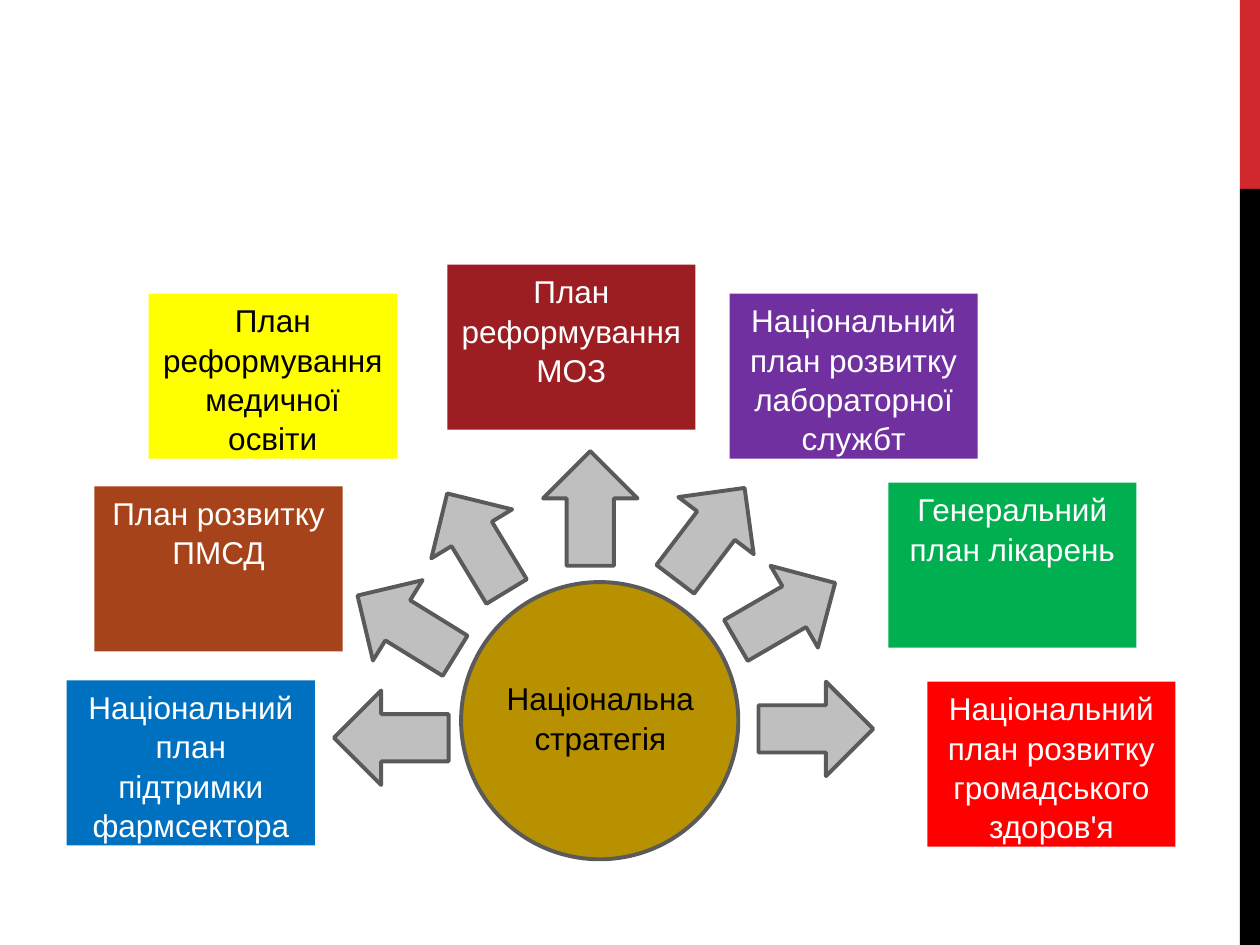
from pptx import Presentation
from pptx.dml.color import RGBColor
from pptx.enum import shapes, text
from pptx.util import Inches, Pt

SHAPE = shapes.MSO_SHAPE


def add_shape(kind, box, fill, outlined=False):
    sp = sld.shapes.add_shape(kind, *map(Inches, box))
    sp.shadow.inherit = False
    sp.fill.solid()
    sp.fill.fore_color.rgb = RGBColor.from_string(fill)
    if outlined:
        sp.line.color.rgb = RGBColor.from_string("5A5A5A")
        sp.line.width = Pt(2.25)
    else:
        sp.line.fill.background()
    return sp


def write(sp, lines, color):
    tf = sp.text_frame
    frame_format = {"word_wrap": True, "vertical_anchor": text.MSO_ANCHOR.TOP}
    for name, value in frame_format.items():
        setattr(tf, name, value)
    tf.text = lines
    for p in tf.paragraphs:
        p.alignment = text.PP_ALIGN.CENTER
        p.line_spacing = 1.04
        for name, value in {"name": "Arial", "size": Pt(18)}.items():
            setattr(p.font, name, value)
        p.font.color.rgb = RGBColor.from_string(color)


prs = Presentation()
prs.slide_width, prs.slide_height = Inches(10), Inches(7.5)
sld = prs.slides.add_slide(prs.slide_layouts[6])

# Side band
add_shape(SHAPE.RECTANGLE, (9.84, 0, 0.16, 1.5), "D1282E")
add_shape(SHAPE.RECTANGLE, (9.84, 1.5, 0.16, 6), "000000")

# Central strategy
add_shape(SHAPE.OVAL, (3.66, 4.62, 2.2, 2.2), "B89101", outlined=True)
label = sld.shapes.add_textbox(Inches(3.9), Inches(5.33), Inches(1.73), Inches(0.71))
write(label, "Національна\nстратегія", "000000")

# Arrows clockwise from the left: left, top, rotation
arrows = [
    (2.65, 5.48, 180),
    (2.77, 4.59, 211.7),
    (3.33, 3.93, 238.8),
    (4.23, 3.66, 270),
    (5.18, 3.86, 307.2),
    (5.78, 4.48, 329.9),
    (6.02, 5.41, 0),
]
for left, top, rotation in arrows:
    sp = add_shape(SHAPE.RIGHT_ARROW, (left, top, 0.91, 0.75), "BFBFBF", outlined=True)
    sp.rotation = rotation

# Plans clockwise from the left: left, top, fill, text colour, wording
plans = [
    (0.53, 5.4, "0070C0", "FFFFFF", "Національний план підтримки фармсектора"),
    (0.75, 3.86, "A6431A", "FFFFFF", "План розвитку ПМСД"),
    (1.18, 2.33, "FFFF00", "000000", "План реформування медичної освіти"),
    (3.55, 2.1, "9D1E22", "FFFFFF", "План реформування МОЗ"),
    (5.79, 2.33, "7030A0", "FFFFFF", "Національний план розвитку лабораторної службт"),
    (7.05, 3.83, "00B050", "FFFFFF", "Генеральний план лікарень"),
    (7.36, 5.41, "FF0000", "FFFFFF", "Національний план розвитку громадського здоров'я"),
]
for left, top, fill, color, wording in plans:
    sp = add_shape(SHAPE.RECTANGLE, (left, top, 1.97, 1.31), fill)
    write(sp, wording, color)

prs.save("out.pptx")
